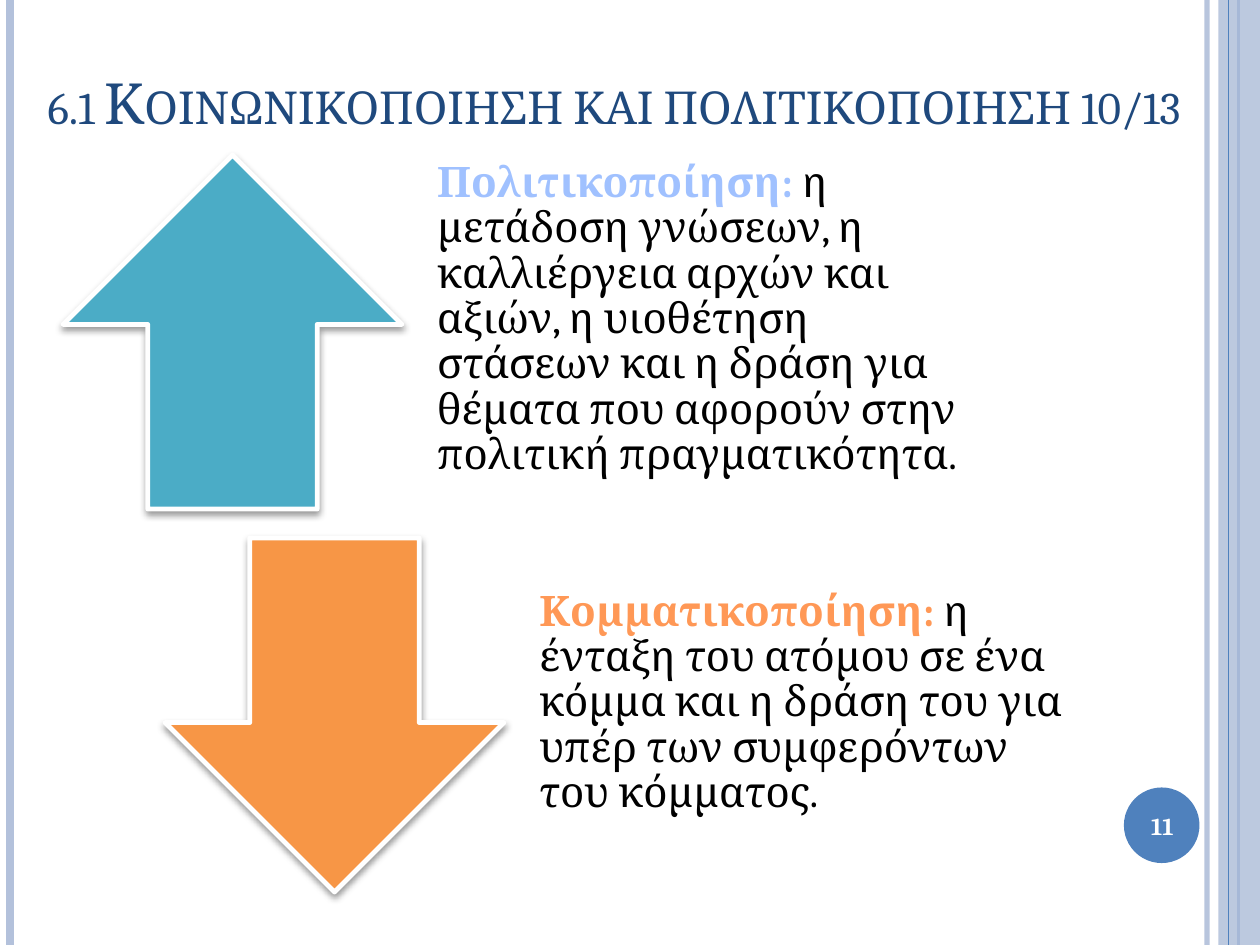
import pptx
import pptx.util
from pptx.dml.color import RGBColor
from pptx.enum.shapes import MSO_CONNECTOR, MSO_SHAPE
from pptx.enum.text import MSO_ANCHOR, PP_ALIGN
from pptx.oxml import parse_xml
from pptx.oxml.ns import nsdecls, qn
from pptx.util import Inches

FONT = "Cambria"
WHITE = RGBColor(0xFF, 0xFF, 0xFF)
BLACK = RGBColor(0x00, 0x00, 0x00)
BLUE = RGBColor(0x4F, 0x81, 0xBD)
PALE_BLUE = RGBColor(0xB3, 0xC1, 0xDB)
NAVY = RGBColor(0x1F, 0x49, 0x7D)
TEAL = RGBColor(0x4B, 0xAC, 0xC6)
ORANGE = RGBColor(0xF7, 0x96, 0x46)
TERM_BLUE = RGBColor(0xA0, 0xC1, 0xFF)
TERM_ORANGE = RGBColor(0xFF, 0x98, 0x56)
SLIDE_WIDTH, SLIDE_HEIGHT = Inches(10), Inches(7.5)

SHADOW = (
    f'<a:effectLst {nsdecls("a")}><a:outerShdw blurRad="50800" dist="25400" dir="5400000" '
    'rotWithShape="0"><a:srgbClr val="000000"><a:alpha val="40000"/></a:srgbClr>'
    "</a:outerShdw></a:effectLst>"
)


def set_opacity(element, percent):
    """Set the opacity of the first solid colour inside an element."""
    color = next(element.iter(qn("a:srgbClr")))
    color.append(parse_xml(f'<a:alpha {nsdecls("a")} val="{percent * 1000}"/>'))


def format_run(run, size, color, bold=False):
    """Apply the slide font, size, colour and weight to a run."""
    run.font.name = FONT
    run.font.size = pptx.util.Pt(size)
    run.font.color.rgb = color
    run.font.bold = bold


def add_filled_shape(slide, kind, left, top, width, height, color):
    """Add a flat preset shape without an outline."""
    shape = slide.shapes.add_shape(kind, left, top, width, height)
    shape.shadow.inherit = False
    shape.fill.solid()
    shape.fill.fore_color.rgb = color
    shape.line.fill.background()
    return shape


def add_text_box(slide, left, top, width, height, anchor):
    """Add a wrapping text box and return its text frame."""
    text_frame = slide.shapes.add_textbox(left, top, width, height).text_frame
    text_frame.word_wrap = True
    text_frame.vertical_anchor = anchor
    return text_frame


def add_vertical_rule(slide, x, height, color, weight):
    """Add a vertical line running down from the top edge."""
    rule = slide.shapes.add_connector(MSO_CONNECTOR.STRAIGHT, x, 0, x, height)
    rule.line.color.rgb = color
    rule.line.width = pptx.util.Pt(weight)
    rule._element.spPr.append(parse_xml(f'<a:effectLst {nsdecls("a")}/>'))
    return rule


def add_side_bands(slide, width, height):
    """Draw the rules and the translucent band along both edges."""
    inner_rule = add_vertical_rule(slide, width - Inches(0.42), height, PALE_BLUE, 3)
    set_opacity(inner_rule._element, 93)
    add_vertical_rule(slide, Inches(0.08), height, PALE_BLUE, 4.5)
    add_vertical_rule(slide, width - Inches(0.17), height, BLUE, 1.5)
    band_width = Inches(0.33)
    band = add_filled_shape(
        slide, MSO_SHAPE.RECTANGLE, width - band_width, 0, band_width, height, PALE_BLUE
    )
    set_opacity(band._element, 87)
    add_vertical_rule(slide, width - Inches(0.25), height, BLUE, 0.75)


def add_page_number(slide, left, top, size, number):
    """Draw the round badge with the page number."""
    add_filled_shape(slide, MSO_SHAPE.OVAL, left, top, size, size, BLUE)
    text_frame = add_text_box(
        slide, left - Inches(0.03), top + Inches(0.02),
        size + Inches(0.07), size - Inches(0.03), MSO_ANCHOR.MIDDLE,
    )
    text_frame.text = number
    paragraph = text_frame.paragraphs[0]
    paragraph.alignment = PP_ALIGN.CENTER
    format_run(paragraph.runs[0], 14, WHITE, True)


def add_title(slide, left, top, width, height, text):
    """Write the title in small capitals, raised above the box bottom."""
    text_frame = add_text_box(slide, left, top, width, height, MSO_ANCHOR.BOTTOM)
    text_frame.margin_bottom = Inches(0.47)
    text_frame.text = text
    run = text_frame.paragraphs[0].runs[0]
    format_run(run, 32.4, NAVY)
    run.font._element.set("cap", "small")


def add_definition(slide, left, top, text_gap, kind, fill, term, term_color, meaning):
    """Place an arrow and, to its right, a term with its meaning."""
    arrow_width, height = Inches(2.69), Inches(2.81)
    arrow = add_filled_shape(slide, kind, left, top, arrow_width, height, fill)
    arrow.line.color.rgb = WHITE
    arrow.line.width = pptx.util.Pt(2.75)
    properties = arrow._element.spPr
    properties.replace(properties.find(qn("a:effectLst")), parse_xml(SHADOW))

    text_frame = add_text_box(
        slide, left + arrow_width + text_gap, top, Inches(4.57), height, MSO_ANCHOR.MIDDLE
    )
    text_frame.margin_left = text_frame.margin_right = Inches(0.19)
    text_frame.margin_top, text_frame.margin_bottom = 0, Inches(0.19)
    paragraph = text_frame.paragraphs[0]
    paragraph.line_spacing = 0.9
    for text, color, bold in ((term, term_color, True), (meaning, BLACK, False)):
        run = paragraph.add_run()
        run.text = text
        format_run(run, 24, color, bold)


def main():
    """Build the slide and save it."""
    presentation = pptx.Presentation()
    presentation.slide_width, presentation.slide_height = SLIDE_WIDTH, SLIDE_HEIGHT
    slide = presentation.slides.add_slide(presentation.slide_layouts[6])
    add_side_bands(slide, SLIDE_WIDTH, SLIDE_HEIGHT)
    add_page_number(slide, Inches(8.92), Inches(6.25), Inches(0.6), "11")
    add_title(
        slide, Inches(0.28), Inches(0.3), Inches(9.45), Inches(1.25),
        "6.1 Κοινωνικοποιηση και πολιτικοποιηση 10/13",
    )
    add_definition(
        slide, Inches(0.5), Inches(1.23), Inches(0.09), MSO_SHAPE.UP_ARROW, TEAL,
        "Πολιτικοποίηση:", TERM_BLUE,
        " η μετάδοση γνώσεων, η καλλιέργεια αρχών και αξιών, η υιοθέτηση στάσεων "
        "και η δράση για θέματα που αφορούν στην πολιτική πραγματικότητα.",
    )
    add_definition(
        slide, Inches(1.31), Inches(4.27), Inches(0.09), MSO_SHAPE.DOWN_ARROW, ORANGE,
        "Κομματικοποίηση: ", TERM_ORANGE,
        "η ένταξη του ατόμου σε ένα κόμμα και η δράση του για υπέρ των "
        "συμφερόντων του κόμματος.",
    )
    presentation.save("out.pptx")


if __name__ == "__main__":
    main()
